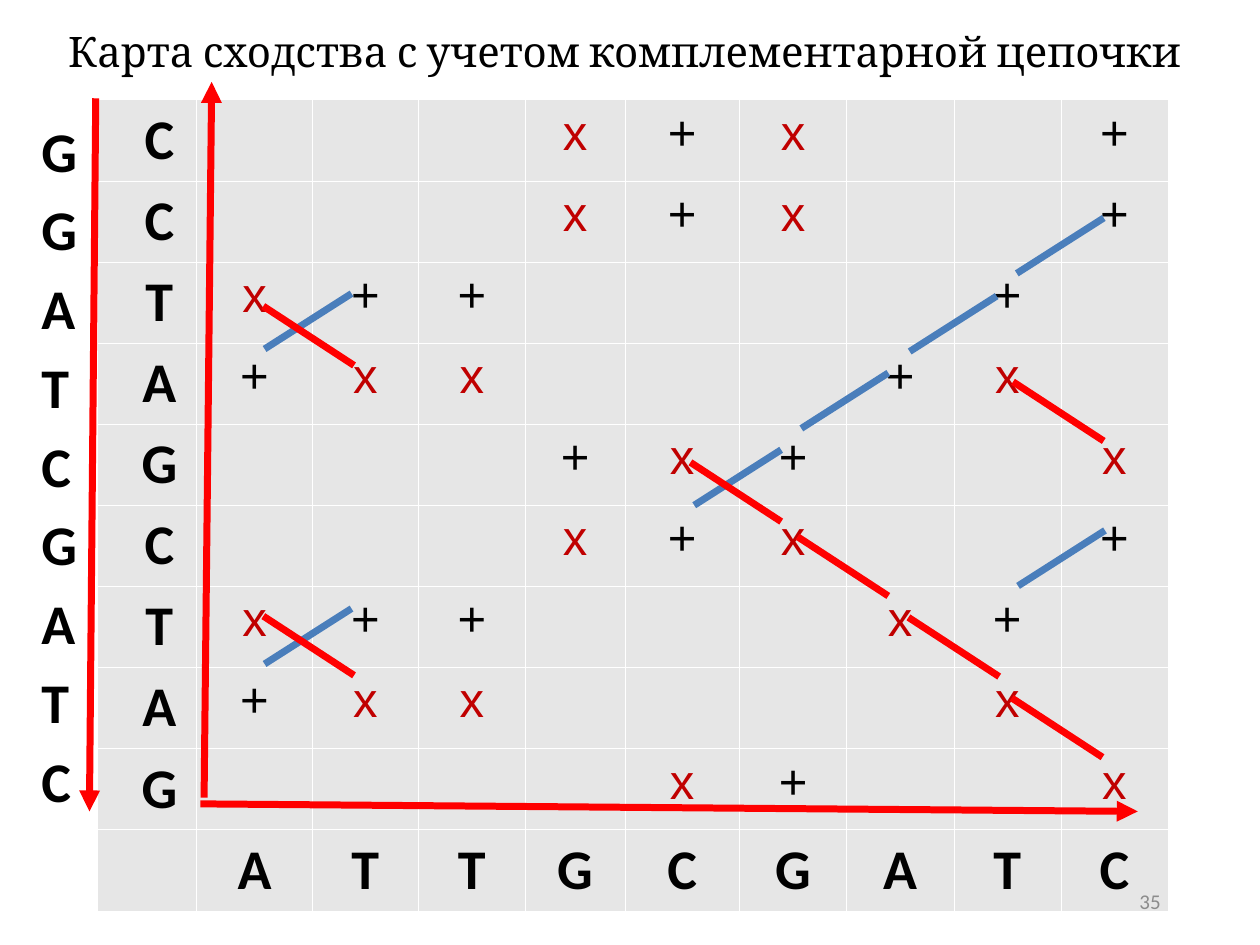
"""Build a dot-matrix similarity map slide with both DNA strands."""
from lxml.etree import SubElement
from pptx import Presentation
from pptx.dml.color import RGBColor
from pptx.enum.shapes import MSO_CONNECTOR
from pptx.enum.text import MSO_ANCHOR, PP_ALIGN
from pptx.oxml.ns import qn
from pptx.util import Inches, Pt

TITLE = "Карта сходства с учетом комплементарной цепочки"
PAGE_NUMBER = "35"
COLORS = {
    "black": "000000", "match": "C00000", "cell": "E6E6E6", "border": "FFFFFF",
    "direct": "4A7EBB", "reverse": "FF0000", "number": "8C8C8C",
}
MARK_COLORS = {"+": "black", "x": "match"}
COMPLEMENT = "GGATCGATC"
ROW_LETTERS = "CCTAGCTAG"
COLUMN_LETTERS = "ATTGCGATC"
MATCHES = [
    "...x+x..+",
    "...x+x..+",
    "x++....+.".replace("....+", "....+"),
    "+xx...+x.",
    "...+x+..x",
    "...x+x..+",
    "x++...x+.",
    "+xx....x.",
    "....x+..x",
]
COLUMN_WIDTHS = [0.79, 0.92, 0.84, 0.85, 0.79, 0.91, 0.85, 0.85, 0.85, 0.85]
ROW_HEIGHT = 0.63
TABLE_LEFT, TABLE_TOP = 0.77, 0.79
AXES = [
    ((1.59, 6.38), (9.03, 6.44)),
    ((0.76, 0.78), (0.71, 6.44)),
    ((1.62, 6.33), (1.68, 0.65)),
]
DIAGONALS = {
    "direct": {
        "step": (0.69, -0.44),
        "starts": [(2.1, 2.77), (2.1, 5.27), (5.51, 4.01), (6.36, 3.4),
                   (7.22, 2.79), (8.07, 2.17), (8.08, 4.65)],
    },
    "reverse": {
        "step": (0.72, 0.47),
        "starts": [(5.48, 3.67), (6.33, 4.26), (7.21, 4.9), (8.03, 5.54),
                   (8.04, 3.03), (2.09, 2.43), (2.09, 4.89)],
    },
}


def color(name):
    return RGBColor.from_string(COLORS[name])


def write(paragraph, text, size, font, color_name="black", bold=False,
          alignment=PP_ALIGN.LEFT):
    paragraph.alignment = alignment
    run = paragraph.add_run()
    run.text = text
    run.font.size = Pt(size)
    run.font.name = font
    run.font.bold = bold
    run.font.color.rgb = color(color_name)


def place(shape, left, top, width, height):
    shape.left, shape.top = Inches(left), Inches(top)
    shape.width, shape.height = Inches(width), Inches(height)


def add_line(slide, start, end, color_name, arrow=False):
    points = [Inches(value) for value in (*start, *end)]
    connector = slide.shapes.add_connector(MSO_CONNECTOR.STRAIGHT, *points)
    connector.line.color.rgb = color(color_name)
    connector.line.width = Pt(4)
    properties = connector._element.spPr
    if arrow:
        SubElement(properties.find(qn("a:ln")), qn("a:tailEnd"), type="triangle")
    SubElement(properties, qn("a:effectLst"))


def style_cell(cell):
    properties = cell._tc.get_or_add_tcPr()
    for side in ("a:lnL", "a:lnR", "a:lnT", "a:lnB"):
        border = SubElement(properties, qn(side), w="762")
        fill = SubElement(border, qn("a:solidFill"))
        SubElement(fill, qn("a:srgbClr"), val=COLORS["border"])
    cell.fill.solid()
    cell.fill.fore_color.rgb = color("cell")
    cell.margin_left = cell.margin_right = Inches(0.09)


def add_title(slide):
    title = slide.shapes.title
    place(title, 0.45, 0.14, 9.12, 0.52)
    frame = title.text_frame
    frame.margin_left = frame.margin_right = Inches(0.09)
    frame.vertical_anchor = MSO_ANCHOR.MIDDLE
    write(frame.paragraphs[0], TITLE, 24, "Cambria")


def add_map(slide):
    rows = [letter + marks for letter, marks in zip(ROW_LETTERS, MATCHES)]
    rows.append("." + COLUMN_LETTERS)
    frame = slide.shapes.add_table(
        len(rows), len(COLUMN_WIDTHS), Inches(TABLE_LEFT), Inches(TABLE_TOP),
        Inches(sum(COLUMN_WIDTHS)), Inches(ROW_HEIGHT * len(rows)))
    table = frame.table
    table.first_row = table.horz_banding = False
    for column, width in zip(table.columns, COLUMN_WIDTHS):
        column.width = Inches(width)
    for row_index, row in enumerate(rows):
        table.rows[row_index].height = Inches(ROW_HEIGHT)
        for column_index, symbol in enumerate(row):
            cell = table.cell(row_index, column_index)
            style_cell(cell)
            paragraph = cell.text_frame.paragraphs[0]
            if symbol in MARK_COLORS:
                write(paragraph, symbol, 28, "Arial", MARK_COLORS[symbol],
                      alignment=PP_ALIGN.CENTER)
            elif symbol != ".":
                write(paragraph, symbol, 32, "Calibri", bold=True,
                      alignment=PP_ALIGN.CENTER)
                if column_index == 0:
                    cell.margin_left = Inches(0.29)


def add_page_number(slide):
    box = slide.shapes.add_textbox(
        Inches(7.06), Inches(6.95), Inches(2.25), Inches(0.4))
    frame = box.text_frame
    frame.word_wrap = True
    frame.vertical_anchor = MSO_ANCHOR.MIDDLE
    write(frame.paragraphs[0], PAGE_NUMBER, 12, "Calibri", "number",
          alignment=PP_ALIGN.RIGHT)


def add_complement(slide):
    box = slide.shapes.add_textbox(
        Inches(0.23), Inches(0.78), Inches(0.49), Inches(5.78))
    frame = box.text_frame
    frame.word_wrap = False
    for index, letter in enumerate(COMPLEMENT):
        paragraph = frame.add_paragraph() if index else frame.paragraphs[0]
        paragraph.line_spacing = Pt(45)
        write(paragraph, letter, 32, "Calibri", bold=True)


def main():
    presentation = Presentation()
    presentation.slide_width, presentation.slide_height = Inches(10), Inches(7.5)
    slide = presentation.slides.add_slide(presentation.slide_layouts[5])
    add_title(slide)
    add_map(slide)
    add_page_number(slide)
    add_complement(slide)
    for start, end in AXES:
        add_line(slide, start, end, "reverse", arrow=True)
    for color_name, diagonal in DIAGONALS.items():
        width, height = diagonal["step"]
        for left, top in diagonal["starts"]:
            add_line(slide, (left, top), (left + width, top + height), color_name)
    presentation.save("out.pptx")


if __name__ == "__main__":
    main()
